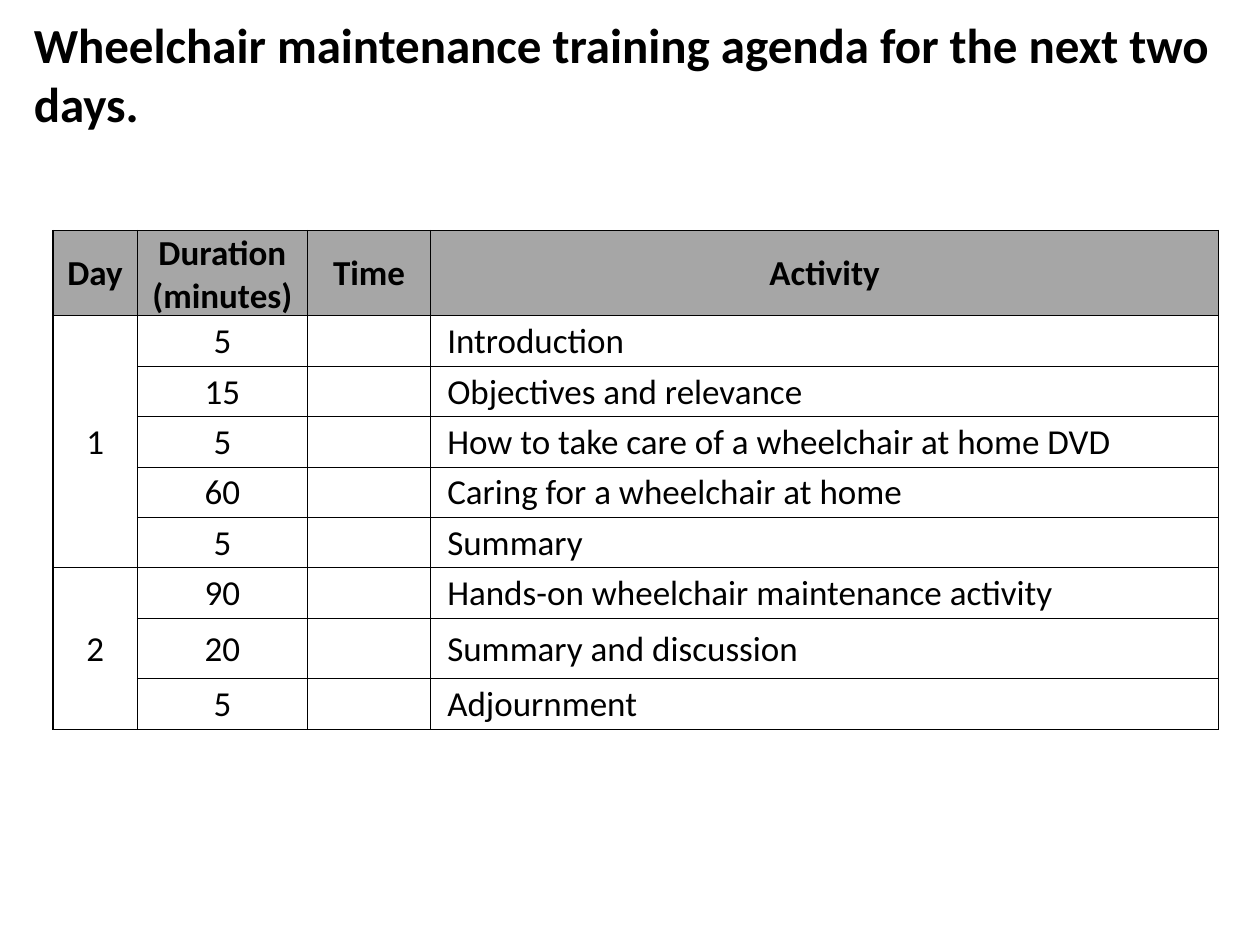
"""Build a slide with the two-day wheelchair maintenance training agenda."""
from lxml.etree import SubElement
from pptx import Presentation
from pptx.dml.color import RGBColor
from pptx.enum.text import MSO_ANCHOR, PP_ALIGN
from pptx.oxml.ns import qn
from pptx.util import Inches, Pt

TITLE = "Wheelchair maintenance training agenda for the next two days."
HEADS = ["Day", "Duration (minutes)", "Time", "Activity"]
DAYS = {
    "1": [
        ("5", "Introduction"),
        ("15", "Objectives and relevance"),
        ("5", "How to take care of a wheelchair at home DVD"),
        ("60", "Caring for a wheelchair at home"),
        ("5", "Summary"),
    ],
    "2": [
        ("90", "Hands-on wheelchair maintenance activity"),
        ("20", "Summary and discussion"),
        ("5", "Adjournment"),
    ],
}
WIDTHS = [0.67, 1.35, 0.98, 6.25]
HEIGHTS = [0.4] * 7 + [0.48, 0.4]
COLORS = {"ink": "000000", "head": "A6A6A6"}
THIN, THICK = 0.5, 1


def write(frame, text, size=20, bold=False, align=PP_ALIGN.CENTER, indent=0):
    para = frame.paragraphs[0]
    para.alignment = align
    if indent:
        props = para._p.get_or_add_pPr()
        props.set("marL", str(Inches(indent)))
        props.set("indent", "0")
    if text:
        run = para.add_run()
        run.text = text
        run.font.name = "Calibri"
        run.font.size = Pt(size)
        run.font.bold = bold
        run.font.color.rgb = RGBColor.from_string(COLORS["ink"])


def border(cell, **widths):
    props = cell._tc.get_or_add_tcPr()
    for side in "LRTB":
        line = SubElement(props, qn("a:ln" + side), w=str(Pt(widths.get(side, THIN))))
        fill = SubElement(line, qn("a:solidFill"))
        SubElement(fill, qn("a:srgbClr"), val=COLORS["ink"])


def style(cell, row, col):
    cell.vertical_anchor = MSO_ANCHOR.MIDDLE
    cell.margin_left = cell.margin_right = cell.margin_top = Inches(0.01)
    cell.margin_bottom = 0
    last = len(HEIGHTS) - 1
    border(
        cell,
        L=THIN if col else THICK,
        R=THICK if col == len(WIDTHS) - 1 else THIN,
        T=THIN if row else THICK,
        B=THICK if row == last and col == 0 else THIN,
    )
    if row:
        cell.fill.background()
    else:
        cell.fill.solid()
        cell.fill.fore_color.rgb = RGBColor.from_string(COLORS["head"])


def add_title(slide):
    box = slide.shapes.add_textbox(Inches(0.17), Inches(0.06), Inches(10), Inches(1.04))
    frame = box.text_frame
    frame.word_wrap = True
    frame.vertical_anchor = MSO_ANCHOR.MIDDLE
    write(frame, TITLE, size=28, bold=True, align=PP_ALIGN.LEFT)


def add_agenda(slide):
    table = slide.shapes.add_table(
        len(HEIGHTS), len(WIDTHS), Inches(0.42), Inches(1.83),
        Inches(sum(WIDTHS)), Inches(sum(HEIGHTS)),
    ).table
    table.first_row = table.horz_banding = False
    for column, width in zip(table.columns, WIDTHS):
        column.width = Inches(width)
    for row, height in zip(table.rows, HEIGHTS):
        row.height = Inches(height)
    for row in range(len(HEIGHTS)):
        for col in range(len(WIDTHS)):
            style(table.cell(row, col), row, col)
    for col, head in enumerate(HEADS):
        write(table.cell(0, col).text_frame, head, bold=True)
    top = 1
    for day, items in DAYS.items():
        first = table.cell(top, 0)
        first.merge(table.cell(top + len(items) - 1, 0))
        write(first.text_frame, day)
        for row, (length, task) in enumerate(items, top):
            write(table.cell(row, 1).text_frame, length)
            write(table.cell(row, 3).text_frame, task, align=PP_ALIGN.LEFT, indent=0.12)
        top += len(items)


def main():
    deck = Presentation()
    deck.slide_width, deck.slide_height = Inches(10), Inches(7.5)
    slide = deck.slides.add_slide(deck.slide_layouts[6])
    add_title(slide)
    add_agenda(slide)
    deck.save("out.pptx")


if __name__ == "__main__":
    main()
